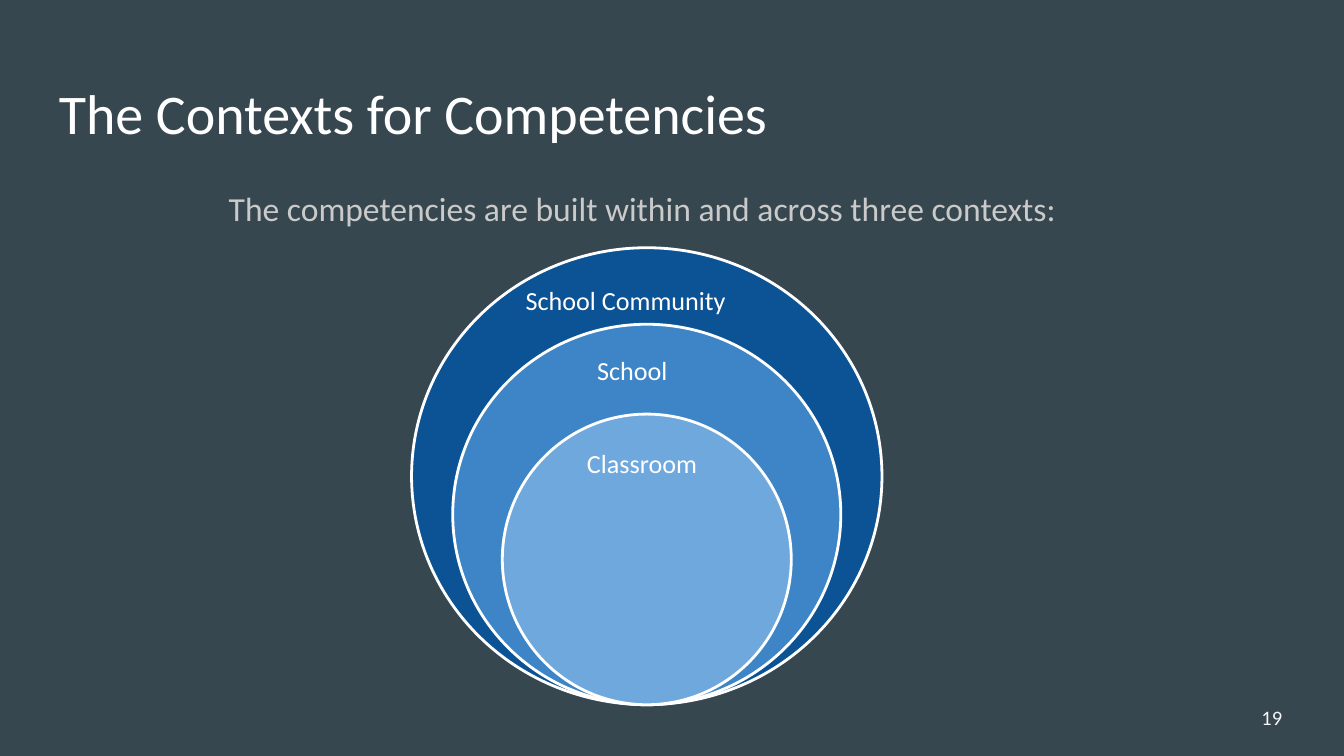
from pptx import Presentation
from pptx.dml.color import RGBColor
from pptx.enum.shapes import MSO_SHAPE as Shape
from pptx.enum.text import MSO_ANCHOR as Anchor, PP_ALIGN as Align
from pptx.util import Pt

PX = 5715
FONT = "Calibri"
COLORS = {
    "background": "37474F",
    "white": "FFFFFF",
    "muted": "CACACA",
    "page": "F5F5F5",
    "community": "0B5394",
    "school": "3D85C6",
    "classroom": "6FA8DC",
}


def color(name):
    return RGBColor.from_string(COLORS[name])


def write(box, text, size, ink, anchor=Anchor.TOP, align=Align.LEFT):
    frame = box.text_frame
    frame.text = text
    frame.word_wrap = True
    frame.vertical_anchor = anchor
    frame.margin_left = frame.margin_right = 16 * PX
    frame.margin_top = frame.margin_bottom = 16 * PX
    paragraph = frame.paragraphs[0]
    paragraph.alignment = align
    font = paragraph.runs[0].font
    font.name = FONT
    font.size = Pt(size)
    font.color.rgb = color(ink)
    return paragraph


deck = Presentation()
deck.slide_width = 1600 * PX
deck.slide_height = 900 * PX
slide = deck.slides.add_slide(deck.slide_layouts[5])
slide.background.fill.solid()
slide.background.fill.fore_color.rgb = color("background")

title = slide.shapes.title
title.left, title.top, title.width, title.height = 54 * PX, 78 * PX, 1491 * PX, 101 * PX
write(title, "The Contexts for Competencies", 30, "white")

intro = slide.shapes.add_textbox(231 * PX, 201 * PX, 1077 * PX, 598 * PX)
sentence = write(intro, "The competencies are built within and across three contexts: ",
                 18, "muted", align=Align.CENTER)
sentence.line_spacing = 1.15
sentence.space_after = Pt(16)

CENTER_X, BASE_Y = 770, 839
for context, width, height in [
    ("community", 560, 544),
    ("school", 462, 453),
    ("classroom", 344, 346),
]:
    circle = slide.shapes.add_shape(
        Shape.OVAL, (CENTER_X - width // 2) * PX, (BASE_Y - height) * PX,
        width * PX, height * PX)
    circle.shadow.inherit = False
    circle.fill.solid()
    circle.fill.fore_color.rgb = color(context)
    circle.line.color.rgb = color("white")
    circle.line.width = Pt(1.5)

for context, left, top, width, height in [
    ("School Community", 610, 322, 344, 51),
    ("School", 695, 406, 149, 56),
    ("Classroom", 683, 517, 344, 56),
]:
    label = slide.shapes.add_textbox(left * PX, top * PX, width * PX, height * PX)
    write(label, context, 14, "white")

page_number = slide.shapes.add_textbox(1486 * PX, 820 * PX, 96 * PX, 69 * PX)
write(page_number, "19", 11, "page", anchor=Anchor.MIDDLE)

deck.save("out.pptx")
